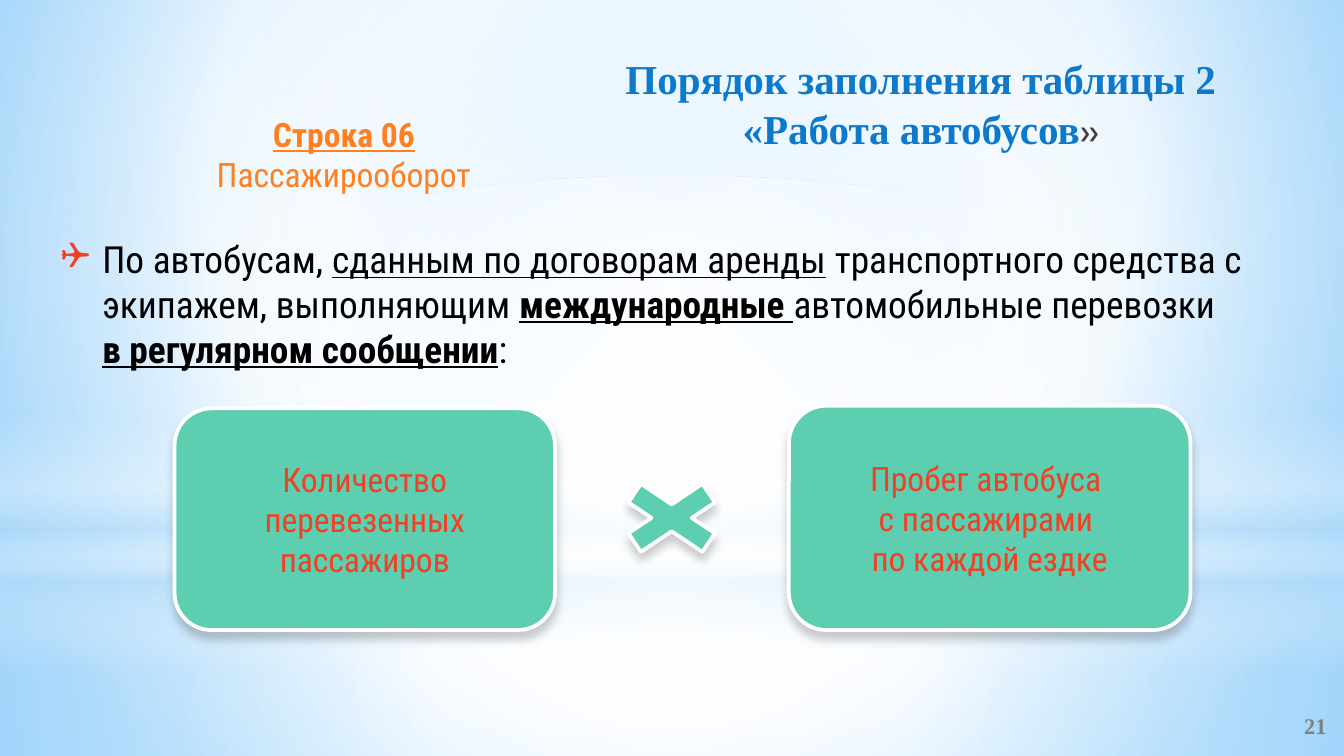
from lxml import etree
from pptx import Presentation
from pptx.dml.color import RGBColor
from pptx.enum.shapes import MSO_SHAPE
from pptx.enum.text import MSO_ANCHOR, MSO_AUTO_SIZE, PP_ALIGN
from pptx.oxml.ns import qn
from pptx.util import Cm, Pt

RECTANGLE, ELLIPSE = MSO_SHAPE.RECTANGLE, MSO_SHAPE.OVAL
ROUNDED, MULTIPLY = MSO_SHAPE.ROUNDED_RECTANGLE, MSO_SHAPE.MATH_MULTIPLY
LEFT, CENTER, RIGHT = PP_ALIGN.LEFT, PP_ALIGN.CENTER, PP_ALIGN.RIGHT
TOP, MIDDLE = MSO_ANCHOR.TOP, MSO_ANCHOR.MIDDLE

COLORS = {
    "title": "0D79CA", "quote": "404040", "heading": "FF8021", "text": "000000",
    "accent": "F14124", "box": "5DCEAF", "white": "FFFFFF", "number": "808080",
    "sky": "9ED5FF", "deep_sky": "5BB9FF", "haze": "B4DCFA",
}
CONDENSED, SERIF, SANS = "Roboto Condensed", "Times New Roman", "Cabin"
WIDTH, HEIGHT = 25.4, 14.29

# Content: each paragraph is a list of (text, format changes)
TITLE = [[("Порядок заполнения таблицы 2\n«Работа автобусов", {}),
          ("»", {"font": SANS, "size": 18, "bold": False, "color": "quote"})]]
HEADING = [[("Строка 06 ", {"bold": True, "underline": True}), ("Пассажирооборот", {})]]
BODY = [[
    ("По автобусам, ", {}),
    ("сданным по договорам аренды", {"underline": True}),
    (" транспортного средства с экипажем, выполняющим ", {}),
    ("международные ", {"bold": True, "underline": True}),
    ("автомобильные перевозки \n", {}),
    ("в регулярном сообщении", {"bold": True, "underline": True}),
    (":", {}),
]]
PAGE_NUMBER = [[("21", {})]]

# Factors: preset, (left, top, width, height) in cm, paragraphs
FACTORS = [
    (ROUNDED, (3.3, 7.72, 7.19, 4.19),
     [[("Количество перевезенных", {})], [("пассажиров", {})]]),
    (ROUNDED, (14.91, 7.67, 7.59, 4.24),
     [[("Пробег автобуса \nс пассажирами \nпо каждой ездке", {})]]),
    (MULTIPLY, (11.35, 8.89, 2.69, 1.8), []),
]

# Gradients: stops are (position, color, opacity), all in percent
BACKGROUND = [(0, "sky", 100), (60, "white", 100), (100, "deep_sky", 100)]
CENTERED = (50, 50, 50, 50)
LAYERS = [
    (RECTANGLE, (0, 10.64, WIDTH, 3.65),
     [(0, "white", 91), (37, "white", 76), (100, "haze", 79)], CENTERED),
    (RECTANGLE, (0, 0, WIDTH, 10.64),
     [(0, "white", 89), (48, "white", 62), (100, "haze", 79)], CENTERED),
    (RECTANGLE, (0, 7.85, WIDTH, 4.78),
     [(0, "white", 0), (29, "white", 30), (45, "haze", 40), (55, "white", 26),
      (65, "haze", 60), (100, "white", 0)], None),
    (ELLIPSE, (0, 3.33, WIDTH, 10.64), [(0, "white", 100), (56, "white", 0)], CENTERED),
]


def rgb(name):
    return RGBColor.from_string(COLORS[name])


def add_xml(parent, tag, **attributes):
    return etree.SubElement(parent, qn(tag), {k: str(v) for k, v in attributes.items()})


def add_color(parent, name, opacity=100):
    color = add_xml(parent, "a:srgbClr", val=COLORS[name])
    if opacity < 100:
        add_xml(color, "a:alpha", val=opacity * 1000)


def set_gradient(fill, element, stops, center):
    """Circular gradient around center, or a vertical one when center is None."""
    fill.gradient()
    gradient = element.find(".//" + qn("a:gradFill"))
    for child in list(gradient):
        gradient.remove(child)
    stop_list = add_xml(gradient, "a:gsLst")
    for position, name, opacity in stops:
        add_color(add_xml(stop_list, "a:gs", pos=position * 1000), name, opacity)
    if center is None:
        add_xml(gradient, "a:lin", ang=90 * 60000, scaled=0)
    else:
        circle = add_xml(gradient, "a:path", path="circle")
        sides = {side: value * 1000 for side, value in zip("ltrb", center)}
        add_xml(circle, "a:fillToRect", **sides)


def add_bullet(paragraph, character, color):
    properties = paragraph._p.get_or_add_pPr()
    properties.set("marL", str(Cm(0.79)))
    properties.set("indent", str(-Cm(0.79)))
    add_color(add_xml(properties, "a:buClr"), color)
    add_xml(properties, "a:buFont", typeface="Wingdings")
    add_xml(properties, "a:buChar", char=character)


def write(shape, paragraphs, font=CONDENSED, size=18, color="text", bold=False,
          align=CENTER, anchor=TOP, bullet=None):
    frame = shape.text_frame
    frame.word_wrap = True
    frame.auto_size = MSO_AUTO_SIZE.NONE
    frame.vertical_anchor = anchor
    for index, runs in enumerate(paragraphs):
        paragraph = frame.add_paragraph() if index else frame.paragraphs[0]
        if bullet:
            add_bullet(paragraph, bullet, "accent")
        paragraph.alignment = align
        paragraph.space_before = Pt(0)
        for text, changes in runs:
            style = {"font": font, "size": size, "color": color, "bold": bold,
                     "underline": False, **changes}
            for number, line in enumerate(text.split("\n")):
                if number:
                    paragraph.add_line_break()
                if not line:
                    continue
                run = paragraph.add_run()
                run.text = line
                run.font.name = style["font"]
                run.font.size = Pt(style["size"])
                run.font.bold = style["bold"]
                run.font.underline = style["underline"]
                run.font.color.rgb = rgb(style["color"])


def place(shape, left, top, width, height):
    shape.left, shape.top = Cm(left), Cm(top)
    shape.width, shape.height = Cm(width), Cm(height)
    # Bring to front, above the background layers
    shape._element.getparent().append(shape._element)
    return shape


def add_plain_shape(slide, preset, box):
    shape = slide.shapes.add_shape(preset, *map(Cm, box))
    shape.shadow.inherit = False
    shape.line.fill.background()
    return shape


def add_text_box(slide, box):
    return slide.shapes.add_textbox(*map(Cm, box))


def add_factor(slide, preset, box, paragraphs):
    shape = add_plain_shape(slide, preset, box)
    shape.fill.solid()
    shape.fill.fore_color.rgb = rgb("box")
    shape.line.color.rgb = rgb("white")
    shape.line.width = Pt(2)
    effects = shape._element.spPr.find(qn("a:effectLst"))
    shadow = add_xml(effects, "a:outerShdw", blurRad=Pt(5), dist=Pt(4),
                     dir=90 * 60000, rotWithShape=0)
    add_color(shadow, "text", 20)
    write(shape, paragraphs, color="accent", anchor=MIDDLE)


def main():
    presentation = Presentation()
    presentation.slide_width, presentation.slide_height = Cm(WIDTH), Cm(HEIGHT)
    slide = presentation.slides.add_slide(presentation.slide_layouts[1])

    # Background and light layers
    set_gradient(slide.background.fill, slide.element, BACKGROUND, (20, 10, 20, 60))
    for preset, box, stops, center in LAYERS:
        layer = add_plain_shape(slide, preset, box)
        set_gradient(layer.fill, layer._element, stops, center)

    # Title, page number, heading and body
    write(place(slide.shapes.title, 10.9, 0.89, 13, 2.13), TITLE,
          font=SERIF, size=22, color="title", bold=True)
    write(add_text_box(slide, (20.24, 13.34, 5.08, 0.76)), PAGE_NUMBER, font=SERIF,
          size=12, color="number", bold=True, align=RIGHT, anchor=MIDDLE)
    write(add_text_box(slide, (3.3, 2.03, 6.4, 1.8)), HEADING, color="heading")
    write(place(slide.placeholders[1], 0.89, 4.34, 23.6, 2.82), BODY,
          size=20, align=LEFT, bullet="❑")

    # Factors of the product
    for preset, box, paragraphs in FACTORS:
        add_factor(slide, preset, box, paragraphs)

    presentation.save("out.pptx")


if __name__ == "__main__":
    main()
